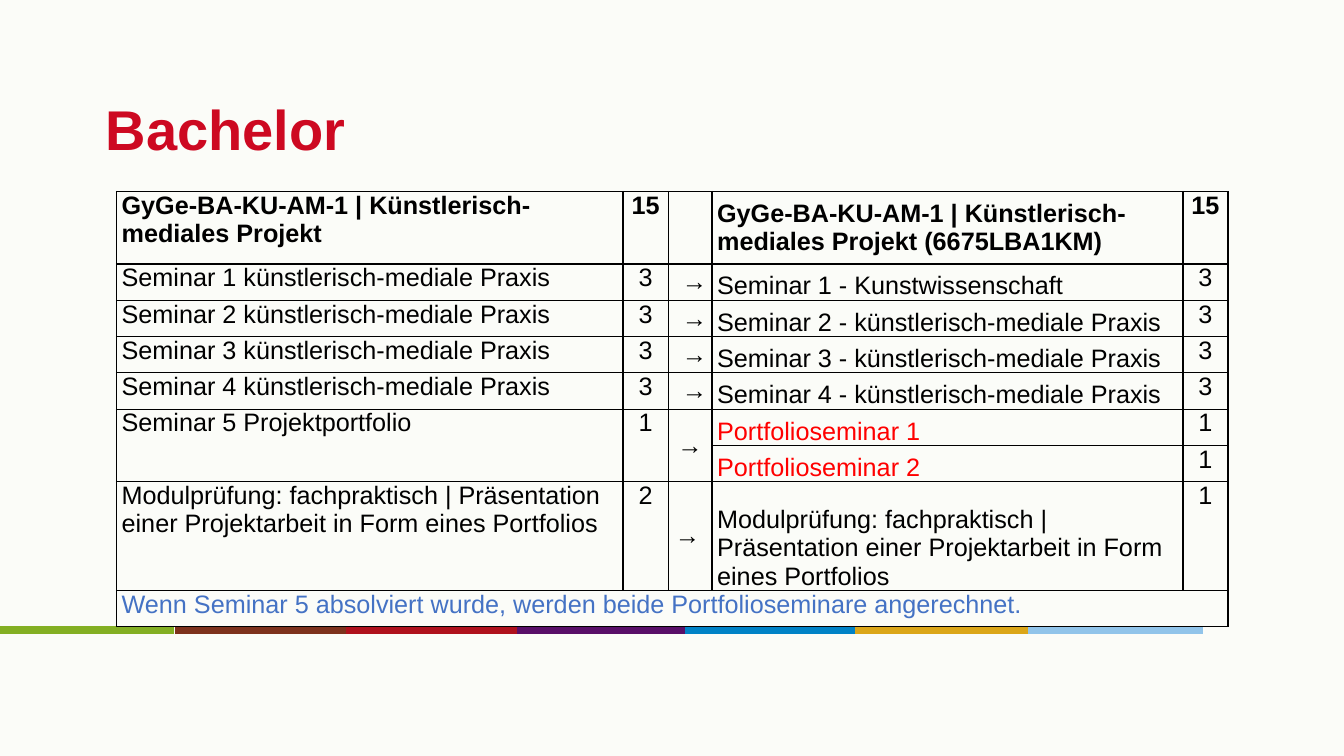
"""Build the Bachelor slide that maps old module parts to new ones."""
from dataclasses import dataclass
from typing import Optional

from lxml.etree import SubElement
from pptx import Presentation
from pptx.dml.color import RGBColor
from pptx.enum.shapes import MSO_CONNECTOR as Connector
from pptx.enum.text import MSO_ANCHOR as Anchor, PP_ALIGN as Align
from pptx.oxml.ns import qn
from pptx.util import Inches, Length, Pt

COLORS = {
    "page": "FBFCF8", "title": "CD0921", "text": "000000", "new": "FF0000", "note": "4472C4",
    "green": "83AF23", "brown": "7D321D", "red": "AF111D", "purple": "590F68",
    "blue": "0082C6", "gold": "DBA619", "sky": "91C4EA",
}
FONT = "Arial"
SLIDE_WIDTH, SLIDE_HEIGHT = Inches(13.33), Inches(7.5)
INSET = 0.38
ROW_SHARE = 4.8
COLUMN_SHARES = (37.69, 3.35, 3.27, 35.04, 3.35)


@dataclass(frozen=True)
class Stripe:
    color: str
    start: float


@dataclass(frozen=True)
class ModuleRow:
    old: str = ""
    old_points: str = ""
    arrow: str = ""
    new: str = ""
    new_points: str = ""
    units: int = 1
    arrow_align: Align = Align.RIGHT
    new_anchor: Anchor = Anchor.BOTTOM
    old_color: str = "text"
    new_color: str = "text"
    bold: bool = False


STRIPE_SHARE = 12.98
STRIPES = (
    Stripe("green", 0), Stripe("brown", 13.05), Stripe("red", 25.73), Stripe("purple", 38.48),
    Stripe("blue", 51), Stripe("gold", 63.6), Stripe("sky", 76.5),
)
PRACTICE = "künstlerisch-mediale Praxis"
MODULE = "GyGe-BA-KU-AM-1 | Künstlerisch-mediales Projekt"
EXAM = "Modulprüfung: fachpraktisch | Präsentation einer Projektarbeit in Form eines Portfolios"
SEMINARS = tuple(
    ModuleRow(f"Seminar {number} {PRACTICE}", "3", "→", f"Seminar {number} - {subject}", "3")
    for number, subject in enumerate(("Kunstwissenschaft", PRACTICE, PRACTICE, PRACTICE), 1)
)
ROWS = (
    ModuleRow(MODULE, "15", "", f"{MODULE} (6675LBA1KM)", "15", units=2,
              new_anchor=Anchor.MIDDLE, bold=True),
    *SEMINARS,
    ModuleRow("Seminar 5 Projektportfolio", "1", "→", "Portfolioseminar 1", "1",
              arrow_align=Align.CENTER, new_color="new"),
    ModuleRow(new="Portfolioseminar 2", new_points="1", new_color="new"),
    ModuleRow(EXAM, "2", "→ ", EXAM, "1", units=3),
    ModuleRow("Wenn Seminar 5 absolviert wurde, werden beide Portfolioseminare angerechnet.",
              old_color="note"),
)
SPLIT_ROW = 5
NOTE_ROW = len(ROWS) - 1


def across(percent: float) -> Length:
    return Length(round(SLIDE_WIDTH * percent / 100))


def down(percent: float) -> Length:
    return Length(round(SLIDE_HEIGHT * percent / 100))


def add_span(para, text: str, size: float, color: str, bold: bool) -> None:
    span = para.add_run()
    span.text = text
    span.font.name = FONT
    span.font.size = Pt(size)
    span.font.bold = bold
    span.font.color.rgb = RGBColor.from_string(COLORS[color])


def write_title(page, text: str) -> None:
    box = page.shapes.title
    box.left, box.top = across(7.5), down(8.67)
    box.width, box.height = across(85), down(16.67)
    frame = box.text_frame
    frame.margin_left = frame.margin_right = across(INSET)
    frame.margin_top = frame.margin_bottom = across(INSET)
    frame.vertical_anchor = Anchor.MIDDLE
    frame.word_wrap = True
    para = frame.paragraphs[0]
    para.alignment = Align.LEFT
    add_span(para, text, 40, "title", True)


def draw_stripe(page, stripe: Stripe) -> None:
    height = down(83.33)
    line = page.shapes.add_connector(
        Connector.STRAIGHT, across(stripe.start), height,
        across(stripe.start + STRIPE_SHARE), height)
    line.line.color.rgb = RGBColor.from_string(COLORS[stripe.color])
    line.line.width = Pt(5.5)
    SubElement(line._element.spPr, qn("a:effectLst"))


def frame_cell(cell) -> None:
    properties = cell._tc.get_or_add_tcPr()
    for side in ("a:lnL", "a:lnR", "a:lnT", "a:lnB"):
        border = SubElement(properties, qn(side), w=str(Pt(1)))
        fill = SubElement(border, qn("a:solidFill"))
        SubElement(fill, qn("a:srgbClr"), val=COLORS["text"])
    cell.fill.background()
    cell.margin_left = cell.margin_right = across(INSET)
    cell.margin_top = cell.margin_bottom = 0


def fill_cell(cell, text: str, align: Align, anchor: Anchor, color: str, bold: bool) -> None:
    frame_cell(cell)
    cell.vertical_anchor = anchor
    if text:
        para = cell.text_frame.paragraphs[0]
        para.alignment = align
        add_span(para, text, 18, color, bold)


def fill_row(table, index: int, row: ModuleRow) -> None:
    contents = (
        (row.old, Align.LEFT, Anchor.TOP, row.old_color),
        (row.old_points, Align.CENTER, Anchor.TOP, "text"),
        (row.arrow, row.arrow_align, Anchor.MIDDLE, "text"),
        (row.new, Align.LEFT, row.new_anchor, row.new_color),
        (row.new_points, Align.CENTER, Anchor.TOP, "text"),
    )
    table.rows[index].height = down(ROW_SHARE * row.units)
    for column, content in enumerate(contents):
        fill_cell(table.cell(index, column), *content, row.bold)


def draw_table(page) -> None:
    units = sum(row.units for row in ROWS)
    table = page.shapes.add_table(
        len(ROWS), len(COLUMN_SHARES), across(8.67), down(25.33),
        across(sum(COLUMN_SHARES)), down(ROW_SHARE * units)).table
    table.first_row = table.horz_banding = False
    for column, share in zip(table.columns, COLUMN_SHARES):
        column.width = across(share)
    for index, row in enumerate(ROWS):
        fill_row(table, index, row)
    for column in range(3):
        table.cell(SPLIT_ROW, column).merge(table.cell(SPLIT_ROW + 1, column))
    table.cell(NOTE_ROW, 0).merge(table.cell(NOTE_ROW, len(COLUMN_SHARES) - 1))


def main() -> None:
    deck = Presentation()
    deck.slide_width, deck.slide_height = SLIDE_WIDTH, SLIDE_HEIGHT
    page = deck.slides.add_slide(deck.slide_layouts.get_by_name("Title Only"))
    page.background.fill.solid()
    page.background.fill.fore_color.rgb = RGBColor.from_string(COLORS["page"])
    for stripe in STRIPES:
        draw_stripe(page, stripe)
    write_title(page, "Bachelor")
    draw_table(page)
    deck.save("out.pptx")


if __name__ == "__main__":
    main()
